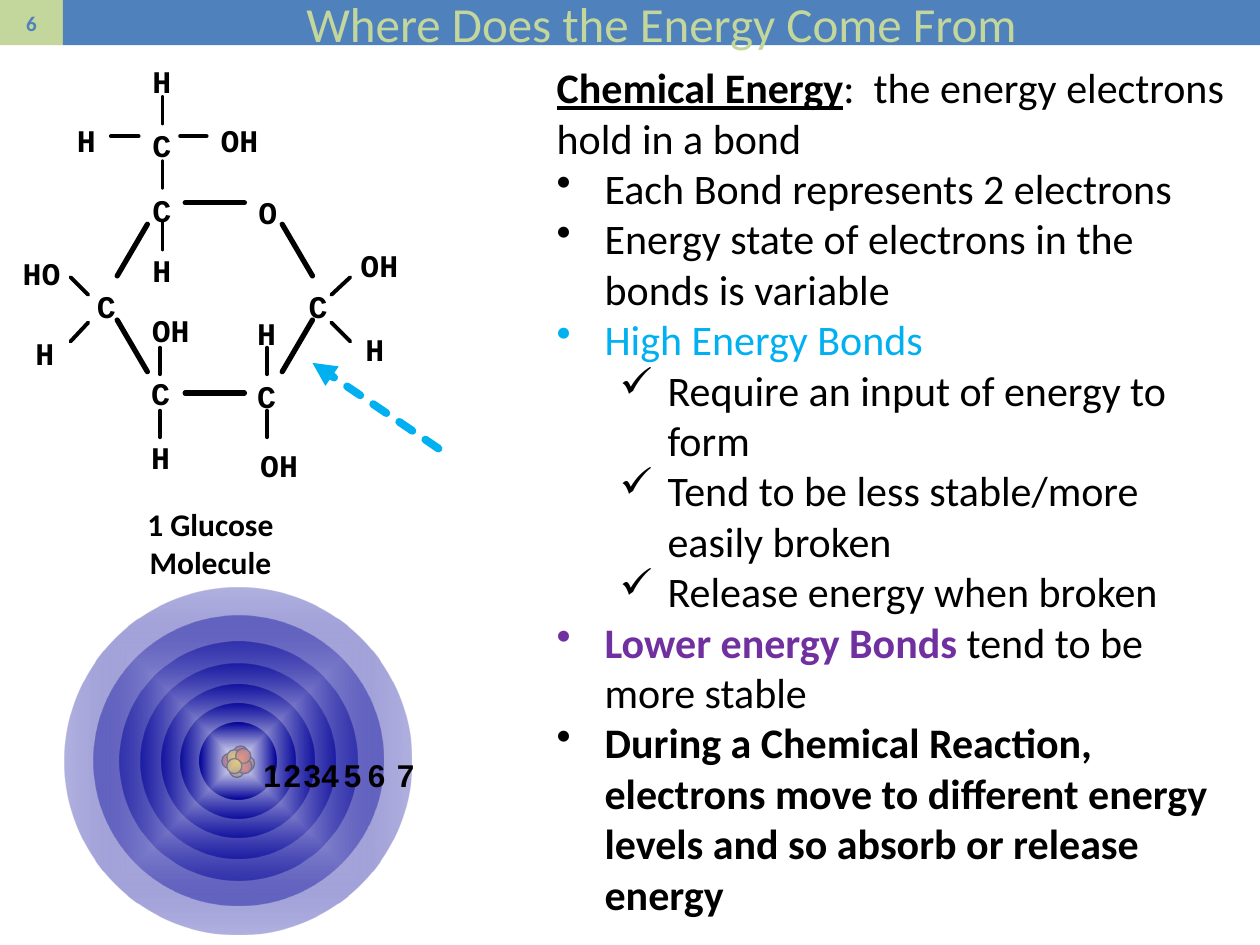
from typing import NamedTuple

from lxml.etree import SubElement
from pptx import Presentation
from pptx.dml.color import RGBColor
from pptx.enum.dml import MSO_LINE
from pptx.enum.shapes import MSO_CONNECTOR, MSO_SHAPE
from pptx.enum.text import MSO_ANCHOR, PP_ALIGN
from pptx.oxml import parse_xml
from pptx.oxml.ns import nsdecls, qn
from pptx.util import Inches, Pt

COLORS = {
    "green": "C3D69B",
    "blue": "4F81BD",
    "black": "000000",
    "white": "FFFFFF",
    "navy": "000099",
    "red": "CC3300",
    "gold": "CC9900",
    "sky": "00B0F0",
    "purple": "7030A0",
}


class Atom(NamedTuple):
    text: str
    x: float
    y: float
    w: float = 0.53


class Bond(NamedTuple):
    x1: float
    y1: float
    x2: float
    y2: float
    width: float = 2.25


class Shell(NamedTuple):
    size: float
    alpha: int
    center_alpha: int = 100


class Span(NamedTuple):
    text: str
    color: str = "black"
    bold: bool = False
    underline: bool = False


class Line(NamedTuple):
    spans: list[Span]
    bullet: str = ""
    indent: float = 0.38


ATOMS = [
    Atom("C", 1.02, 1.47), Atom("O", 1.86, 1.48), Atom("C", 2.26, 2.23),
    Atom("C", 1.85, 2.94), Atom("C", 1.01, 2.92), Atom("C", 0.58, 2.23),
    Atom("H", 1.02, 0.44), Atom("C", 1.02, 0.95), Atom("OH", 1.49, 0.91, 0.82),
    Atom("H", 0.46, 0.91, 0.45), Atom("H", 1.02, 1.94), Atom("OH", 2.6, 1.9, 0.82),
    Atom("H", 2.71, 2.57), Atom("H", 1.85, 2.44), Atom("OH", 1, 2.42, 0.71),
    Atom("OH", 1.86, 3.49, 0.71), Atom("H", 1.01, 3.43),
    Atom("HO", -0.08, 1.97, 0.82), Atom("H", 0.09, 2.6),
]
UPRIGHT = [(1.29, 0.77), (1.29, 1.28), (1.29, 1.77),
           (1.27, 2.76), (2.12, 2.76), (1.27, 3.26), (2.12, 3.26)]
BONDS = [Bond(x, y, x, y + 0.21) for x, y in UPRIGHT] + [
    Bond(1.43, 1.08, 1.64, 1.08), Bond(0.88, 1.08, 1.1, 1.08),
    Bond(2.63, 2.34, 2.78, 2.2), Bond(2.63, 2.56, 2.78, 2.71),
    Bond(0.7, 2.34, 0.56, 2.2), Bond(0.7, 2.56, 0.56, 2.71),
    Bond(1.47, 1.61, 1.94, 1.61, 3), Bond(1.47, 3.12, 1.94, 3.12, 3),
    Bond(2.24, 1.78, 2.48, 2.19, 3), Bond(0.93, 2.54, 1.17, 2.95, 3),
    Bond(1.17, 1.78, 0.93, 2.19, 3), Bond(2.48, 2.54, 2.24, 2.95, 3),
]
SHELLS = [Shell(2.75, 30), Shell(2.3, 40), Shell(1.89, 50),
          Shell(1.55, 60), Shell(1.21, 70), Shell(0.91, 80)]
CORE = Shell(0.61, 100, 50)
NUCLEUS = (1.89, 6.04)
NUCLEONS = [(1.85, 5.92), (1.82, 6.05), (1.76, 5.98), (1.9, 6),
            (1.88, 6.02), (1.8, 5.95), (1.87, 5.94), (1.8, 6.02)]
LEVEL_LEFTS = [2.02, 2.18, 2.34, 2.48, 2.66, 2.85, 3.08]
LINES = [
    Line([Span("Chemical Energy", bold=True, underline=True),
          Span(":  the energy electrons hold in a bond")]),
    Line([Span("Each Bond represents 2 electrons")], "•"),
    Line([Span("Energy state of electrons in the bonds is variable")], "•"),
    Line([Span("High Energy Bonds", "sky")], "•"),
    Line([Span("Require an input of energy to form")], "✓", 0.88),
    Line([Span("Tend to be less stable/more easily broken")], "✓", 0.88),
    Line([Span("Release energy when broken")], "✓", 0.88),
    Line([Span("Lower energy Bonds ", "purple", True), Span("tend to be more stable")], "•"),
    Line([Span("During a Chemical Reaction, electrons move to different energy "
               "levels and so absorb or release energy", bold=True)], "•"),
]


def rgb(name: str) -> RGBColor:
    return RGBColor.from_string(COLORS[name])


def write(sp, text: str, size: float, font: str, color: str = "black", bold: bool = True):
    tf = sp.text_frame
    p = tf.paragraphs[0]
    p.text = text
    p.alignment = PP_ALIGN.CENTER
    p.font.size, p.font.name, p.font.bold = Pt(size), font, bold
    p.font.color.rgb = rgb(color)
    return tf


def add_box(shapes, x: float, y: float, w: float, h: float):
    return shapes.add_textbox(Inches(x), Inches(y), Inches(w), Inches(h))


def add_solid(shapes, kind, x: float, y: float, w: float, h: float, color: str):
    sp = shapes.add_shape(kind, Inches(x), Inches(y), Inches(w), Inches(h))
    sp.shadow.inherit = False
    sp.fill.solid()
    sp.fill.fore_color.rgb = rgb(color)
    sp.line.fill.background()
    return sp


def add_header(shapes, x: float, w: float, fill: str, text: str, size: float,
               color: str, bold: bool) -> None:
    sp = add_solid(shapes, MSO_SHAPE.RECTANGLE, x, 0, w, 0.36, fill)
    tf = write(sp, text, size, "Calibri", color, bold)
    tf.margin_top = tf.margin_bottom = 0
    tf.vertical_anchor = MSO_ANCHOR.MIDDLE


def add_line(shapes, bond: Bond, color: str = "black"):
    line = shapes.add_connector(MSO_CONNECTOR.STRAIGHT, Inches(bond.x1), Inches(bond.y1),
                                Inches(bond.x2), Inches(bond.y2))
    line.line.color.rgb = rgb(color)
    line.line.width = Pt(bond.width)
    line.line._get_or_add_ln().set("cap", "rnd")
    SubElement(line._element.spPr, qn("a:effectLst"))
    return line


def add_shell(shapes, shell: Shell) -> None:
    x, y = (c - shell.size / 2 for c in NUCLEUS)
    sp = add_solid(shapes, MSO_SHAPE.OVAL, x, y, shell.size, shell.size, "navy")
    stops = [(0, "white", shell.center_alpha), (100, "navy", shell.alpha)]
    gs = "".join(
        f'<a:gs pos="{pos * 1000}"><a:srgbClr val="{COLORS[color]}">'
        f'<a:alpha val="{alpha * 1000}"/></a:srgbClr></a:gs>' for pos, color, alpha in stops)
    grad = parse_xml(
        f'<a:gradFill {nsdecls("a")} rotWithShape="1"><a:gsLst>{gs}</a:gsLst>'
        '<a:path path="shape"><a:fillToRect l="50000" t="50000" r="50000" b="50000"/>'
        '</a:path></a:gradFill>')
    spPr = sp._element.spPr
    spPr.replace(spPr.find(qn("a:solidFill")), grad)


def add_glucose(s) -> None:
    shapes = s.shapes.add_group_shape().shapes
    for atom in ATOMS:
        sp = add_box(shapes, atom.x, atom.y, atom.w, 0.4)
        write(sp, atom.text, 18, "Courier New").word_wrap = True
    for bond in BONDS:
        add_line(shapes, bond)


def add_energy_levels(s) -> None:
    shapes = s.shapes.add_group_shape().shapes
    for shell in SHELLS:
        add_shell(shapes, shell)
    for i, (x, y) in enumerate(NUCLEONS):
        sp = add_solid(shapes, MSO_SHAPE.OVAL, x, y, 0.12, 0.12, ("red", "gold")[i % 2])
        sp.line.color.rgb = rgb("black")
        sp.line.width = Pt(0.75)
    add_shell(shapes, CORE)
    for level, x in enumerate(LEVEL_LEFTS, 1):
        tf = write(add_box(shapes, x, 5.95, 0.15, 0.2), str(level), 18, "Arial")
        tf.word_wrap = False
        tf.margin_left, tf.margin_right = Inches(0.07), 0


def add_notes_text(s) -> None:
    tf = add_box(s.shapes, 4.32, 0.44, 5.59, 6.97).text_frame
    tf.word_wrap = True
    for i, line in enumerate(LINES):
        p = tf.add_paragraph() if i else tf.paragraphs[0]
        p.font.size, p.font.name = Pt(24), "Calibri"
        for span in line.spans:
            r = p.add_run()
            r.text = span.text
            r.font.size, r.font.name = Pt(24), "Calibri"
            r.font.bold, r.font.underline = span.bold, span.underline
            r.font.color.rgb = rgb(span.color)
        if line.bullet:
            p.level = int(line.bullet == "✓")
            pPr = p._p.get_or_add_pPr()
            pPr.set("marL", str(Inches(line.indent)))
            pPr.set("indent", str(Inches(-0.38)))
            pPr.insert(0, parse_xml(f'<a:buChar {nsdecls("a")} char="{line.bullet}"/>'))


def main() -> None:
    prs = Presentation()
    prs.slide_width, prs.slide_height = Inches(10), Inches(7.5)
    s = prs.slides.add_slide(prs.slide_layouts[6])
    add_header(s.shapes, 0, 0.5, "green", "6", 12, "blue", True)
    add_header(s.shapes, 0.5, 9.5, "blue", "Where Does the Energy Come From", 28, "green", False)
    caption = add_box(s.shapes, 0.56, 3.96, 2.22, 1.04)
    write(caption, "1 Glucose Molecule", 18, "Calibri").word_wrap = False
    add_glucose(s)
    add_energy_levels(s)
    add_notes_text(s)
    arrow = add_line(s.shapes, Bond(3.48, 3.56, 2.48, 2.88, 4.5), "sky")
    arrow.line.dash_style = MSO_LINE.SQUARE_DOT
    SubElement(arrow.line._get_or_add_ln(), qn("a:tailEnd"), type="triangle")
    prs.save("out.pptx")


if __name__ == "__main__":
    main()
